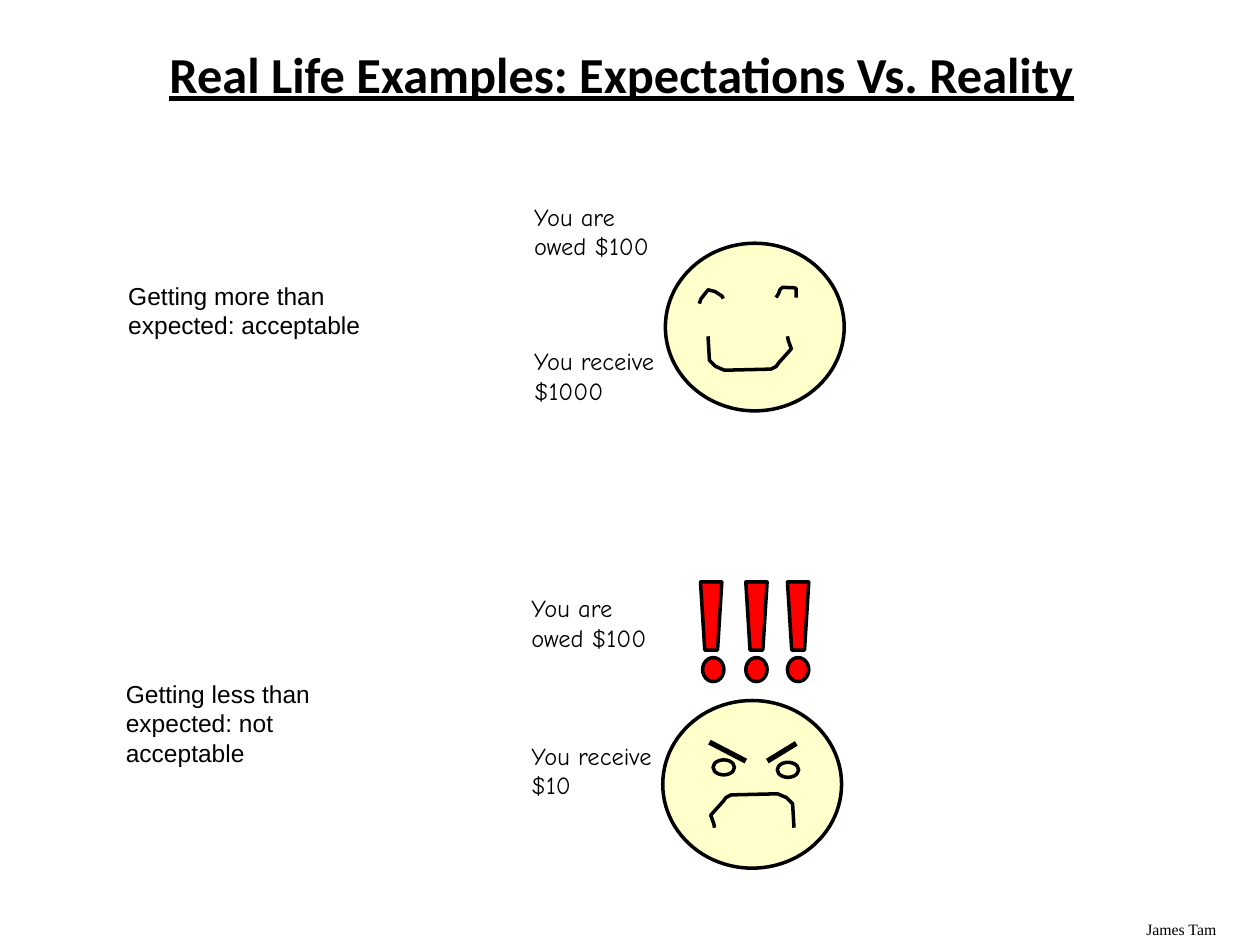
from lxml.etree import SubElement
from pptx import Presentation
from pptx.dml.color import RGBColor as Rgb
from pptx.enum.shapes import MSO_CONNECTOR as Link, MSO_SHAPE as Preset
from pptx.enum.text import MSO_ANCHOR as Anchor, MSO_AUTO_SIZE as Fit, PP_ALIGN as Align
from pptx.oxml.ns import qn
from pptx.util import Pt

COLORS = {"ink": "000000", "skin": "FFFFCC", "alarm": "FF0000"}
FACE_SIZE = (102.2, 95.8)
MOUTH = [(0, 0), (0.8, 13.7), (2.2, 15.2), (4.4, 17.3), (9.4, 19.4), (36, 18.8),
         (38.9, 17.3), (40.4, 15.2), (47.6, 7.2), (45.9, 2.5), (45.4, 0)]
LEFT_EYE = [(0, 7.9), (0.9, 5.3), (2.2, 3.6), (5, 0), (9, 1), (13, 3.6), (13.7, 5)]
RIGHT_EYE = [(0, 5.8), (1.4, 3.6), (2.2, 1.4), (3.6, 0), (10, 0.2), (11.5, 0.6), (11.5, 5.8)]


def color(name):
    return Rgb.from_string(COLORS[name])


def write(frame, text, font="Arial", size=14, bold=None, underline=None, align=None, spacing=None):
    frame.word_wrap = True
    frame.auto_size = Fit.NONE
    paragraph = frame.paragraphs[0]
    paragraph.alignment = align
    paragraph.line_spacing = spacing
    run = paragraph.add_run()
    run.text = text
    run.font.name = font
    run.font.size = Pt(size)
    run.font.bold = bold
    run.font.underline = underline
    run.font.color.rgb = color("ink")


class Sketch:
    def __init__(self, slide, stroke=2):
        self.slide = slide
        self.stroke = stroke

    def title(self, text, box):
        heading = self.slide.shapes.title
        heading.left, heading.top, heading.width, heading.height = map(Pt, box)
        heading.text_frame.vertical_anchor = Anchor.MIDDLE
        write(heading.text_frame, text, font="Calibri", size=28.8, bold=True,
              underline=True, align=Align.CENTER, spacing=0.9)

    def note(self, text, box, **style):
        write(self.slide.shapes.add_textbox(*map(Pt, box)).text_frame, text, **style)

    def group(self):
        return self.slide.shapes.add_group_shape().shapes

    def outline(self, shape):
        shape.shadow.inherit = False
        shape.line.color.rgb = color("ink")
        shape.line.width = Pt(self.stroke)

    def solid(self, group, preset, box, fill="skin"):
        shape = group.add_shape(preset, *map(Pt, box))
        shape.fill.solid()
        shape.fill.fore_color.rgb = color(fill)
        self.outline(shape)

    def curve(self, group, points, left, top, rotation=0):
        start, *rest = [(Pt(left + x), Pt(top + y)) for x, y in points]
        builder = group.build_freeform(*start)
        builder.add_line_segments(rest, close=False)
        shape = builder.convert_to_shape()
        shape.fill.background()
        self.outline(shape)
        shape.rotation = rotation

    def brow(self, group, *ends):
        line = group.add_connector(Link.STRAIGHT, *map(Pt, ends))
        line.line.color.rgb = color("ink")
        line.line.width = Pt(3)
        SubElement(line._element.spPr, qn("a:effectLst"))


def happy_face(sketch):
    face = sketch.group()
    sketch.solid(face, Preset.OVAL, (380.2, 139, *FACE_SIZE))
    sketch.curve(face, LEFT_EYE, 399.6, 165.6)
    sketch.curve(face, MOUTH, 404.6, 192.2)
    sketch.curve(face, RIGHT_EYE, 443.5, 164.2)


def angry_face(sketch):
    face = sketch.group()
    sketch.solid(face, Preset.OVAL, (378.7, 400.3, *FACE_SIZE))
    sketch.curve(face, MOUTH, 406.1, 453.6, rotation=180)
    sketch.brow(face, 405.4, 424.1, 426.2, 434.9)
    sketch.brow(face, 438.5, 434.9, 455, 424.8)
    for left, top in ((407.5, 434.2), (444.2, 435.6)):
        sketch.solid(face, Preset.OVAL, (left, top, 12.2, 8.6))
    for bar_left, dot_left in ((400.3, 401.5), (426.2, 426.2), (450, 450)):
        sketch.solid(face, Preset.FLOWCHART_MANUAL_OPERATION, (bar_left, 332.6, 12.2, 38.9), "alarm")
        sketch.solid(face, Preset.OVAL, (dot_left, 375.8, 12.2, 13.7), "alarm")


def main():
    deck = Presentation()
    deck.slide_width, deck.slide_height = Pt(720), Pt(540)
    sketch = Sketch(deck.slides.add_slide(deck.slide_layouts[5]))
    sketch.note("James Tam", (648, 522, 72, 18), font="Times New Roman", size=9)
    sketch.title("Real Life Examples: Expectations Vs. Reality", (33.8, 23.8, 643, 41))
    happy_face(sketch)
    angry_face(sketch)
    for text, left, top in (("You are owed $100", 298.1, 111.6),
                            ("You receive $1000", 298.1, 194.4),
                            ("You are owed $100", 296.6, 335.5),
                            ("You receive $10", 296.6, 419.8)):
        sketch.note(text, (left, top, 84.2, 72.7), font="Comic Neue")
    for text, left, top in (("Getting more than expected: acceptable", 66.2, 157),
                            ("Getting less than expected: not acceptable", 64.8, 384.5)):
        sketch.note(text, (left, top, 162, 72.7))
    deck.save("out.pptx")


if __name__ == "__main__":
    main()
